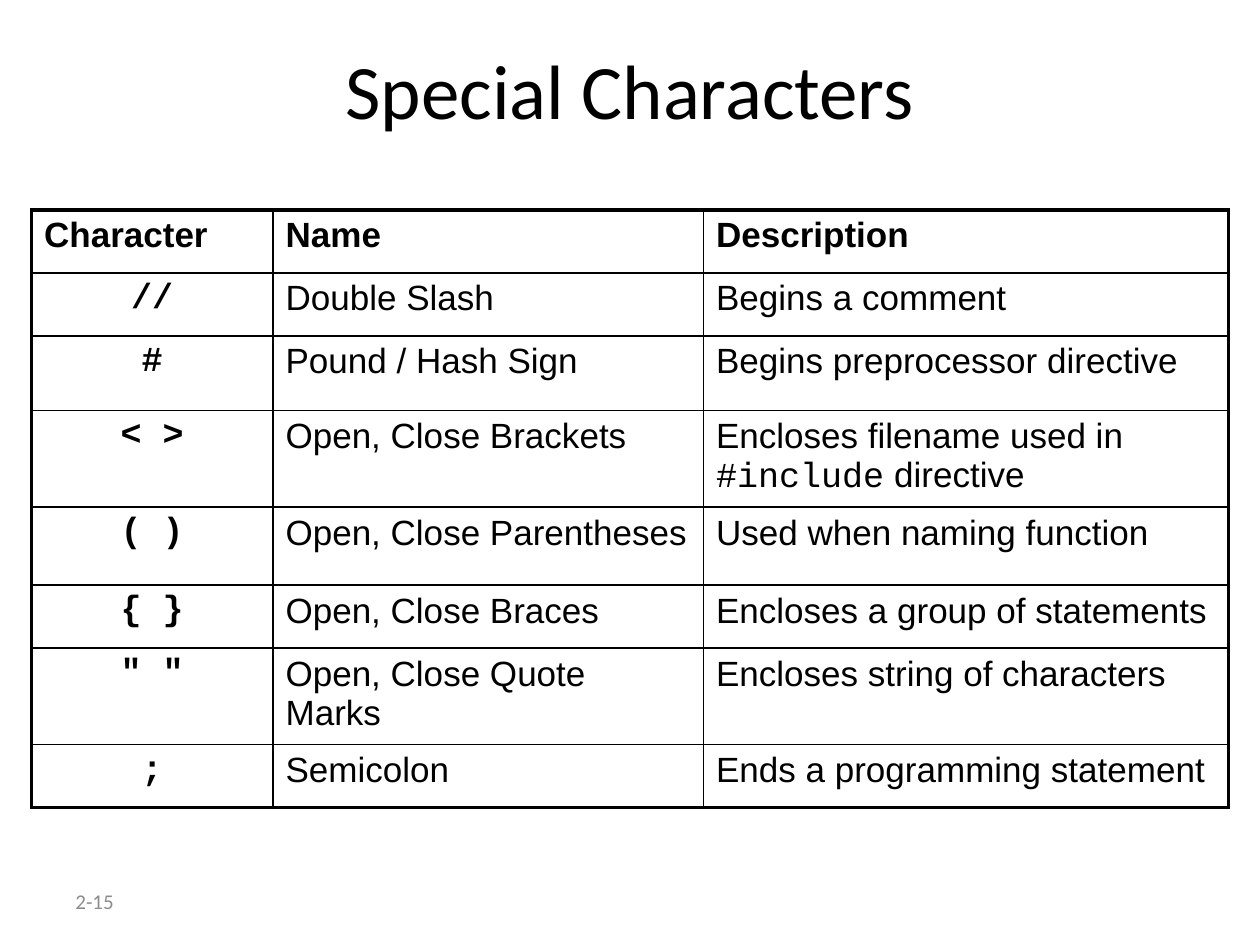
from lxml import etree
from pptx import Presentation
from pptx.dml.color import RGBColor
from pptx.enum.text import MSO_ANCHOR, PP_ALIGN
from pptx.oxml.ns import qn
from pptx.util import Pt

LEFT, CENTER = PP_ALIGN.LEFT, PP_ALIGN.CENTER
MIDDLE = MSO_ANCHOR.MIDDLE

BLACK = RGBColor(0x00, 0x00, 0x00)
GRAY = RGBColor(0x8C, 0x8C, 0x8C)

TITLE_FONT, BODY_FONT, CODE_FONT = "Calibri", "Arial", "Courier New"
THIN, THICK = Pt(1), Pt(2.25)

COL_WIDTHS = [138, 246, 300]
ROW_HEIGHTS = [36, 36, 42.5, 42.5, 44.6, 36, 42.5, 36]

HEADER = ["Character", "Name", "Description"]
# Each description is a list of runs; odd-numbered runs are code
CHARACTERS = [
    ("//", "Double Slash", ["Begins a comment"]),
    ("#", "Pound / Hash Sign", ["Begins preprocessor directive"]),
    ("< >", "Open, Close Brackets",
     ["Encloses filename used in ", "#include", " directive"]),
    ("( )", "Open, Close Parentheses", ["Used when naming function"]),
    ("{ }", "Open, Close Braces", ["Encloses a group of statements"]),
    ('" "', "Open, Close Quote Marks", ["Encloses string of characters"]),
    (";", "Semicolon", ["Ends a programming statement"]),
]


def add_run(p, text, font, size, color=BLACK, bold=False):
    r = p.add_run()
    r.text = text
    r.font.name = font
    r.font.size = Pt(size)
    r.font.bold = bold
    r.font.color.rgb = color


def add_text(s, x, y, w, h, text, size, color, align):
    sp = s.shapes.add_textbox(Pt(x), Pt(y), Pt(w), Pt(h))
    tf = sp.text_frame
    tf.word_wrap = True
    tf.vertical_anchor = MIDDLE
    p = tf.paragraphs[0]
    p.alignment = align
    add_run(p, text, TITLE_FONT, size, color)


def set_borders(cell, widths):
    """Draw the left, right, top and bottom borders, in that order."""
    tc_pr = cell._tc.get_or_add_tcPr()
    for i, (side, width) in enumerate(zip("LRTB", widths)):
        ln = etree.Element(qn(f"a:ln{side}"), w=str(width))
        fill = etree.SubElement(ln, qn("a:solidFill"))
        etree.SubElement(fill, qn("a:srgbClr"), val=str(BLACK))
        tc_pr.insert(i, ln)


def fill_cell(cell, texts, fonts, bold=False, align=LEFT):
    cell.fill.background()
    p = cell.text_frame.paragraphs[0]
    p.alignment = align
    for text, font in zip(texts, fonts):
        add_run(p, text, font, 20, bold=bold)


def add_character_table(s):
    n_rows, n_cols = len(ROW_HEIGHTS), len(COL_WIDTHS)
    table = s.shapes.add_table(n_rows, n_cols, Pt(18), Pt(120),
                               Pt(sum(COL_WIDTHS)), Pt(sum(ROW_HEIGHTS))).table
    table.first_row = table.horz_banding = False
    for col, width in zip(table.columns, COL_WIDTHS):
        col.width = Pt(width)
    for row, height in zip(table.rows, ROW_HEIGHTS):
        row.height = Pt(height)

    # Header row
    for c, label in enumerate(HEADER):
        fill_cell(table.cell(0, c), [label], [BODY_FONT], bold=True)

    # One row per character
    for r, (symbol, name, description) in enumerate(CHARACTERS, start=1):
        fill_cell(table.cell(r, 0), [symbol], [CODE_FONT], bold=True, align=CENTER)
        fill_cell(table.cell(r, 1), [name], [BODY_FONT])
        fill_cell(table.cell(r, 2), description, [BODY_FONT, CODE_FONT, BODY_FONT])

    # Thin grid inside a thick frame
    for r in range(n_rows):
        for c in range(n_cols):
            on_frame = (c == 0, c == n_cols - 1, r == 0, r == n_rows - 1)
            set_borders(table.cell(r, c), [THICK if edge else THIN for edge in on_frame])


def main():
    prs = Presentation()
    prs.slide_width, prs.slide_height = Pt(720), Pt(540)
    s = prs.slides.add_slide(prs.slide_layouts[6])

    # Title
    add_text(s, 54, 18, 612, 66, "Special Characters", 44, BLACK, CENTER)
    # Table of characters
    add_character_table(s)
    # Page number
    add_text(s, 36, 500.5, 168, 28.8, "2-15", 12, GRAY, LEFT)

    prs.save("out.pptx")


if __name__ == "__main__":
    main()
